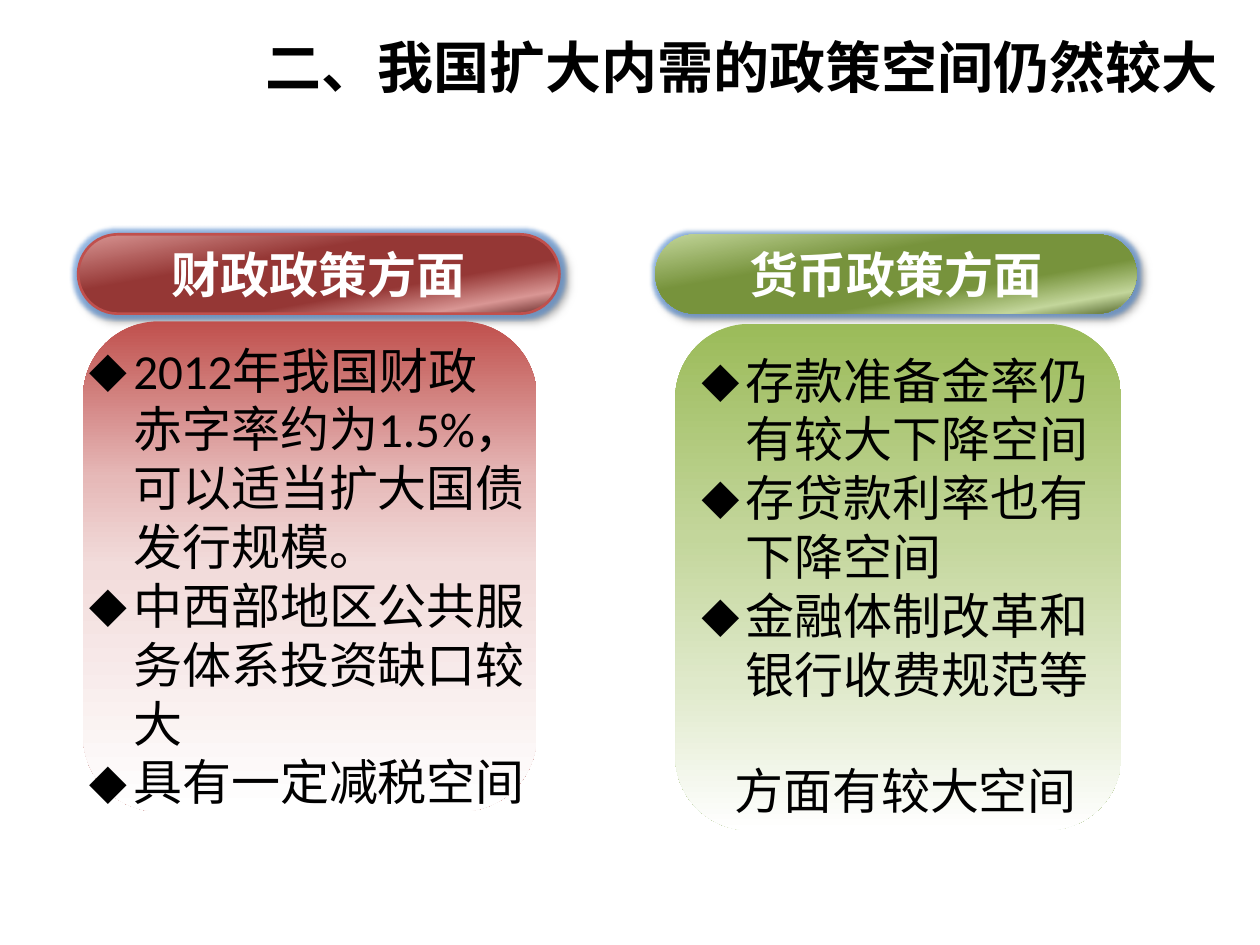
from lxml import etree
from pptx import Presentation
from pptx import util as u
from pptx.dml.color import RGBColor
from pptx.enum import shapes, text
from pptx.oxml import ns

HEADING_FONT = "Noto Sans CJK SC"
BODY_FONT = "Calibri"

FISCAL = {
    "heading": "财政政策方面",
    "pill": (0.62, 1.86, 3.82, 0.63),
    "pill_stops": [(0, "D99694"), (35, "953735"), (66, "953735"), (86, "D99694"), (100, "632523")],
    "outline": "C0504D",
    "panel": (0.66, 2.55, 3.6, 3.89),
    "panel_stops": [(0, "C0504D"), (32, "E6B9B8"), (50, "F2DCDB"), (100, "FFFFFF")],
    "body": (0.61, 2.65, 3.92, 4.81),
    "points": [
        "2012年我国财政\v赤字率约为1.5%，\v可以适当扩大国债\v发行规模。",
        "中西部地区公共服\v务体系投资缺口较\v大",
        "具有一定减税空间",
    ],
    "closing": None,
}
MONETARY = {
    "heading": "货币政策方面",
    "pill": (5.2, 1.86, 3.82, 0.63),
    "pill_stops": [(0, "C3D69B"), (35, "77933C"), (66, "77933C"), (86, "C3D69B"), (100, "4F6228")],
    "outline": None,
    "panel": (5.36, 2.57, 3.54, 4.02),
    "panel_stops": [(0, "9BBB59"), (42, "C3D69B"), (71, "DFE9CA"), (100, "FFFFFF")],
    "body": (5.47, 2.73, 3.31, 3.4),
    "points": [
        "存款准备金率仍\v有较大下降空间",
        "存贷款利率也有\v下降空间",
        "金融体制改革和\v银行收费规范等",
    ],
    "closing": "方面有较大空间",
}


def inches(box):
    return [u.Inches(value) for value in box]


def color(hex_value):
    return RGBColor.from_string(hex_value)


def add_xml(parent, tag, **attributes):
    return etree.SubElement(parent, ns.qn(tag), {k: str(v) for k, v in attributes.items()})


def add_color_xml(parent, hex_value, alpha=None):
    tint = add_xml(parent, "a:srgbClr", val=hex_value)
    if alpha is not None:
        add_xml(tint, "a:alpha", val=alpha * 1000)


def fill_gradient(shape, stops, angle):
    """Fill with (percent, colour) stops; the angle runs clockwise."""
    shape.fill.gradient()
    shape.fill.gradient_angle = 360 - angle
    stop_list = shape._element.spPr.find(".//" + ns.qn("a:gsLst"))
    for stop in list(stop_list):
        stop_list.remove(stop)
    for percent, hex_value in stops:
        add_color_xml(add_xml(stop_list, "a:gs", pos=percent * 1000), hex_value)


def add_glow_and_shadow(shape):
    effects = shape._element.spPr.find(ns.qn("a:effectLst"))
    add_color_xml(add_xml(effects, "a:glow", rad=u.Pt(4)), "558ED5", 60)
    shadow = add_xml(effects, "a:outerShdw", blurRad=u.Pt(4), dist=u.Pt(3),
                     dir=45 * 60000, algn="tl", rotWithShape=0)
    add_color_xml(shadow, "000000", 40)


def set_font(paragraph, name, size, hex_value, bold=False):
    font = paragraph.font
    font.name, font.size, font.bold = name, u.Pt(size), bold
    font.color.rgb = color(hex_value)


def set_heading(paragraph, content, size, hex_value):
    paragraph.text = content
    set_font(paragraph, HEADING_FONT, size, hex_value, bold=True)


def set_indent(paragraph, left, bullet=None):
    properties = paragraph._p.get_or_add_pPr()
    properties.set("marL", str(u.Inches(left)))
    properties.set("indent", str(-u.Inches(left) if bullet else 0))
    if bullet:
        add_xml(properties, "a:buFont", typeface=BODY_FONT)
        add_xml(properties, "a:buChar", char=bullet)


def add_gradient_shape(parent, kind, box, stops, angle):
    shape = parent.shapes.add_shape(kind, *inches(box))
    shape.shadow.inherit = False
    fill_gradient(shape, stops, angle)
    shape.line.fill.background()
    return shape


def add_heading_pill(slide, policy):
    pill = add_gradient_shape(slide, shapes.MSO_SHAPE.ROUNDED_RECTANGLE,
                              policy["pill"], policy["pill_stops"], 80)
    pill.adjustments[0] = 0.5
    if policy["outline"]:
        pill.line.color.rgb = color(policy["outline"])
        pill.line.width = u.Pt(1.5)
    add_glow_and_shadow(pill)
    pill.text_frame.vertical_anchor = text.MSO_ANCHOR.MIDDLE
    heading = pill.text_frame.paragraphs[0]
    heading.alignment = text.PP_ALIGN.CENTER
    set_heading(heading, policy["heading"], 28, "FFFFFF")


def add_policy_panel(slide, policy):
    group = slide.shapes.add_group_shape()
    add_gradient_shape(group, shapes.MSO_SHAPE.FLOWCHART_ALTERNATE_PROCESS,
                       policy["panel"], policy["panel_stops"], 90)
    frame = group.shapes.add_textbox(*inches(policy["body"])).text_frame
    frame.word_wrap = True
    for index, point in enumerate(policy["points"]):
        paragraph = frame.add_paragraph() if index else frame.paragraphs[0]
        paragraph.text = point
        set_indent(paragraph, 0.35, "◆")
        set_font(paragraph, BODY_FONT, 28, "000000")
    if policy["closing"]:
        paragraph = frame.add_paragraph()
        paragraph.text = policy["closing"]
        paragraph.space_before = u.Pt(33)
        set_indent(paragraph, 0.26)
        set_font(paragraph, BODY_FONT, 28, "000000")


def add_title(slide):
    frame = slide.shapes.add_textbox(*inches((2.01, 0.21, 7.95, 0.64))).text_frame
    frame.word_wrap = True
    set_heading(frame.paragraphs[0], "二、我国扩大内需的政策空间仍然较大", 32, "000000")


def main():
    presentation = Presentation()
    presentation.slide_width, presentation.slide_height = u.Inches(10), u.Inches(7.5)
    slide = presentation.slides.add_slide(presentation.slide_layouts[6])
    for policy in (FISCAL, MONETARY):
        add_heading_pill(slide, policy)
        add_policy_panel(slide, policy)
    add_title(slide)
    presentation.save("out.pptx")


if __name__ == "__main__":
    main()
